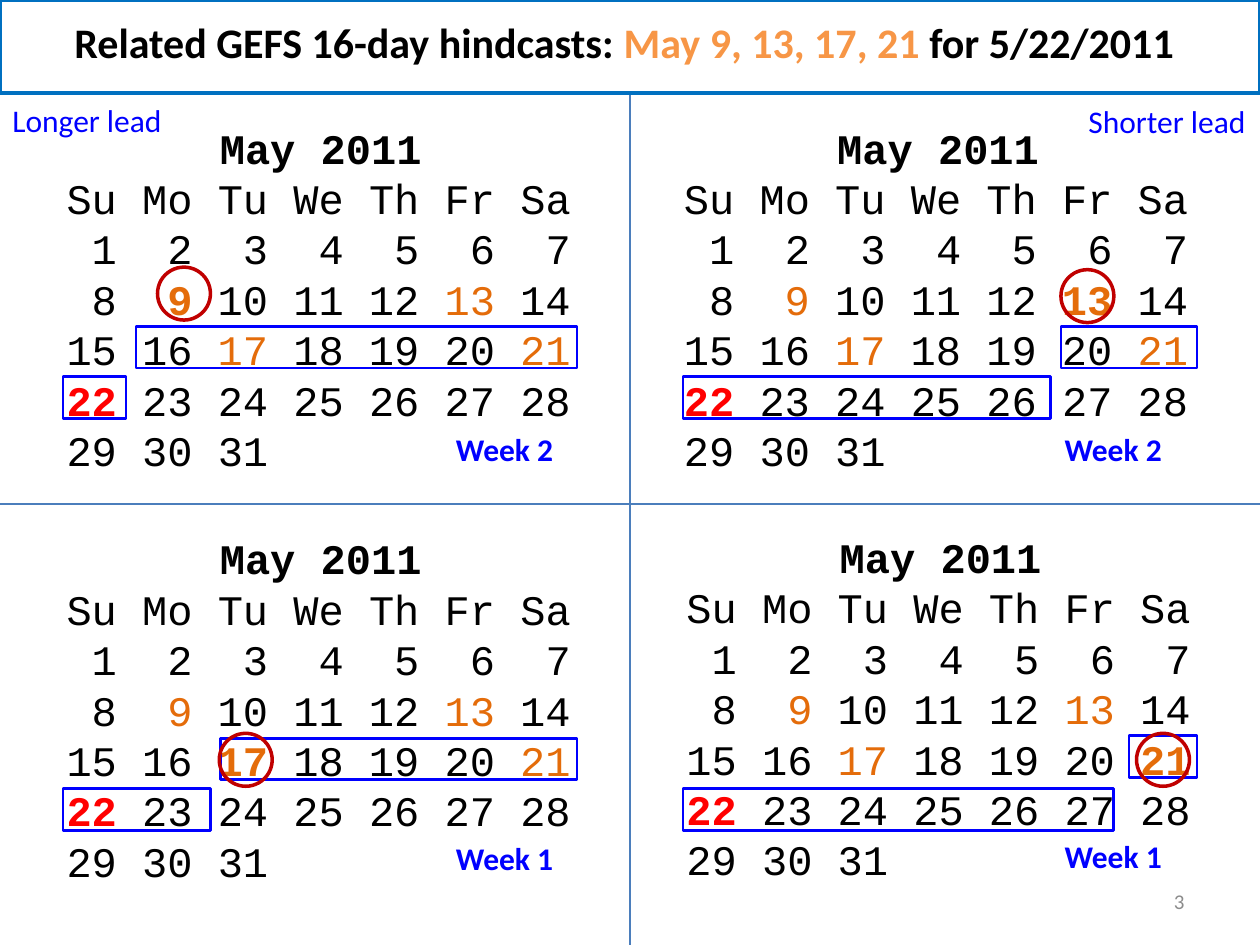
from dataclasses import dataclass
from itertools import groupby

from lxml import etree
from pptx import Presentation
from pptx.dml import color
from pptx.enum import shapes, text
from pptx.oxml import ns
from pptx.util import Inches, Pt


@dataclass(frozen=True)
class Theme:
    body: str = "Calibri"
    mono: str = "Courier New"
    black: str = "000000"
    blue: str = "0000FF"
    orange: str = "E46C0A"
    title_orange: str = "F79646"
    red: str = "FF0000"
    ring: str = "C00000"
    banner: str = "0070C0"
    divider: str = "4B7EBC"
    grey: str = "8C8C8C"
    large: int = 24
    medium: int = 18
    small: int = 12


HINDCAST_DAYS = (9, 13, 17, 21)
TARGET_DAY = 22
LAST_DAY = 31
SPAN_HEIGHT = 0.33
RING_SIZE = 0.42

CALENDARS = [
    dict(at=(0.43, 0.92), start=9, ring=(1.25, 2.12),
         spans=[(1.08, 2.59, 3.5), (0.5, 2.99, 0.5)],
         week="Week 2", week_at=(3.52, 3.36)),
    dict(at=(5.33, 0.92), start=13, ring=(8.42, 2.14),
         spans=[(8.42, 2.59, 1.08), (5.42, 2.99, 2.92)],
         week="Week 2", week_at=(8.35, 3.36)),
    dict(at=(0.43, 4.18), start=17, ring=(1.74, 5.82),
         spans=[(1.75, 5.86, 2.83), (0.5, 6.26, 1.17)],
         week="Week 1", week_at=(3.52, 6.61)),
    dict(at=(5.35, 4.17), start=21, ring=(9.02, 5.82),
         spans=[(8.96, 5.84, 0.54), (5.42, 6.26, 3.42)],
         week="Week 1", week_at=(8.35, 6.59)),
]


class SlideBuilder:
    def __init__(self, prs, theme):
        self.t = theme
        self.s = prs.slides.add_slide(prs.slide_layouts[5])

    def run(self, p, words, size, fill, bold=False, font=None):
        r = p.add_run()
        r.text = words
        r.font.name = font or self.t.body
        r.font.size = Pt(size)
        r.font.bold = bold
        r.font.color.rgb = color.RGBColor.from_string(fill)

    def title(self, parts, x, y, w, h):
        sp = self.s.shapes.title
        sp.left, sp.top, sp.width, sp.height = map(Inches, (x, y, w, h))
        tf = sp.text_frame
        tf.word_wrap = False
        tf.auto_size = text.MSO_AUTO_SIZE.NONE
        tf.vertical_anchor = text.MSO_ANCHOR.TOP
        p = tf.paragraphs[0]
        p.alignment = text.PP_ALIGN.LEFT
        for words, fill in parts:
            self.run(p, words, self.t.large, fill, bold=True)

    def text_box(self, x, y, w, h):
        tf = self.s.shapes.add_textbox(*map(Inches, (x, y, w, h))).text_frame
        tf.word_wrap = True
        return tf

    def label(self, words, x, y, w, size, fill, bold=False, align=text.PP_ALIGN.LEFT):
        tf = self.text_box(x, y, w, 0.4)
        tf.word_wrap = False
        tf.vertical_anchor = text.MSO_ANCHOR.MIDDLE
        p = tf.paragraphs[0]
        p.alignment = align
        self.run(p, words, size, fill, bold)

    def day_style(self, day, start):
        if day == TARGET_DAY:
            return self.t.red, True
        if day in HINDCAST_DAYS:
            return self.t.orange, day == start
        return self.t.black, False

    def calendar(self, x, y, start):
        tf = self.text_box(x, y, 4.23, 2.93)
        plain = (self.t.black, False)
        p = tf.paragraphs[0]
        p.alignment = text.PP_ALIGN.CENTER
        self.run(p, "May 2011", self.t.large, self.t.black, True, self.t.mono)
        rows = [[("Su Mo Tu We Th Fr Sa", plain)]]
        for first in range(1, LAST_DAY + 1, 7):
            row = []
            for day in range(first, min(first + 7, LAST_DAY + 1)):
                gap = " " if day > first else ""
                pad = " " if day < 10 else ""
                row += [(gap + pad, plain), (str(day), self.day_style(day, start))]
            rows.append(row)
        for row in rows:
            p = tf.add_paragraph()
            for (fill, bold), group in groupby(row, key=lambda cell: cell[1]):
                words = "".join(cell[0] for cell in group)
                if words:
                    self.run(p, words, self.t.large, fill, bold, self.t.mono)

    def outline(self, kind, x, y, w, h, line, width):
        sp = self.s.shapes.add_shape(kind, *map(Inches, (x, y, w, h)))
        sp.shadow.inherit = False
        sp.fill.background()
        sp.line.color.rgb = color.RGBColor.from_string(line)
        sp.line.width = Pt(width)

    def divider(self, x1, y1, x2, y2):
        c = self.s.shapes.add_connector(
            shapes.MSO_CONNECTOR.STRAIGHT, *map(Inches, (x1, y1, x2, y2)))
        c.line.color.rgb = color.RGBColor.from_string(self.t.divider)
        c.line.width = Pt(1.5)
        etree.SubElement(c._element.spPr, ns.qn("a:effectLst"))


def main():
    prs = Presentation()
    prs.slide_width, prs.slide_height = Inches(10), Inches(7.5)
    t = Theme()
    b = SlideBuilder(prs, t)
    rect, oval = shapes.MSO_SHAPE.RECTANGLE, shapes.MSO_SHAPE.OVAL

    b.title([("Related GEFS 16-day hindcasts: ", t.black),
             ("May 9, 13, 17, 21 ", t.title_orange),
             ("for 5/22/2011", t.black)], 0.49, 0.08, 9.01, 0.5)
    for cal in CALENDARS:
        b.calendar(*cal["at"], cal["start"])
        for x, y, w in cal["spans"]:
            b.outline(rect, x, y, w, SPAN_HEIGHT, t.blue, 1.5)
        b.outline(oval, *cal["ring"], RING_SIZE, RING_SIZE, t.ring, 2)
        b.label(cal["week"], *cal["week_at"], 0.98, t.medium, t.blue, bold=True)

    b.divider(5, 0.74, 5, 7.5)
    b.divider(0, 4, 10, 4)
    b.outline(rect, 0, 0, 10, 0.74, t.banner, 2)
    b.label("Longer lead", 0, 0.75, 1.4, t.medium, t.blue)
    b.label("Shorter lead", 8.54, 0.76, 1.46, t.medium, t.blue)
    b.label("3", 7.17, 6.95, 2.33, t.small, t.grey, align=text.PP_ALIGN.RIGHT)
    prs.save("out.pptx")


if __name__ == "__main__":
    main()
